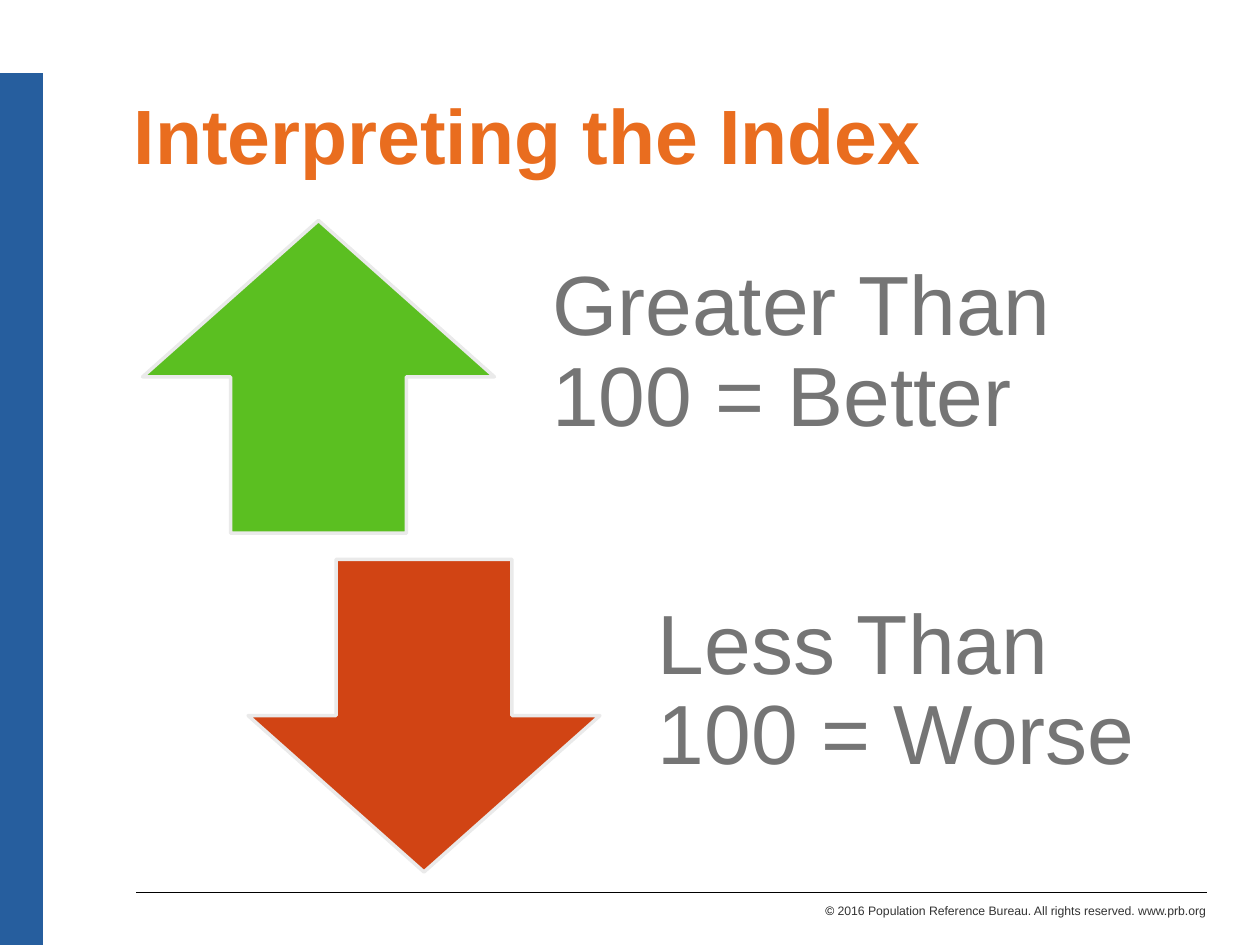
import pptx
import pptx.util
import pptx.dml.color
import pptx.enum.shapes
import pptx.enum.text
import pptx.oxml.ns
import lxml.etree

Pt = pptx.util.Pt
MSO = pptx.enum.shapes.MSO_SHAPE
ANCHOR = pptx.enum.text.MSO_ANCHOR
ALIGN = pptx.enum.text.PP_ALIGN


def rgb(value):
    """Return the colour for a hex string."""
    return pptx.dml.color.RGBColor.from_string(value)


def add_run(p, text, size, color, bold=False):
    """Add one Arial run to a paragraph."""
    r = p.add_run()
    r.text = text
    r.font.name = "Arial"
    r.font.size = Pt(size)
    r.font.bold = bold
    r.font.color.rgb = rgb(color)


def set_frame(tf, left, top, right, bottom, anchor):
    """Set the wrapping, insets and anchor of a text frame."""
    tf.word_wrap = True
    tf.auto_size = pptx.enum.text.MSO_AUTO_SIZE.NONE
    tf.margin_left, tf.margin_top = Pt(left), Pt(top)
    tf.margin_right, tf.margin_bottom = Pt(right), Pt(bottom)
    tf.vertical_anchor = anchor


def add_line(shapes, x1, y1, x2, y2, color, width):
    """Add a straight line without a shadow."""
    line = shapes.add_connector(
        pptx.enum.shapes.MSO_CONNECTOR.STRAIGHT, Pt(x1), Pt(y1), Pt(x2), Pt(y2))
    line.line.color.rgb = rgb(color)
    line.line.width = Pt(width)
    sp_pr = line._element.spPr
    lxml.etree.SubElement(sp_pr, pptx.oxml.ns.qn("a:effectLst"))


def add_title(slide, x, y, w, h):
    """Place and format the slide title."""
    sp = slide.shapes.title
    sp.left, sp.top, sp.width, sp.height = Pt(x), Pt(y), Pt(w), Pt(h)
    set_frame(sp.text_frame, 4.5, 8, 4.5, 0, ANCHOR.TOP)
    p = sp.text_frame.paragraphs[0]
    p.alignment = ALIGN.LEFT
    add_run(p, "Interpreting the Index", 44, "E96D1F", True)


def add_footer(slide, x, y, w):
    """Draw the footer rule with the copyright line below it."""
    add_line(slide.shapes, x, y, x + w, y, "000000", 0.5)
    sp = slide.shapes.add_textbox(Pt(306), Pt(y + 2.6), Pt(x + w + 6.2 - 306), Pt(16))
    set_frame(sp.text_frame, 7.2, 3.6, 7.2, 3.6, ANCHOR.TOP)
    p = sp.text_frame.paragraphs[0]
    p.alignment = ALIGN.RIGHT
    add_run(p, "© ", 7, "000000")
    add_run(p, "2016 Population Reference Bureau. All rights reserved. www.prb.org",
            7, "333333")


def add_reading(slide, x, y, w, h, shape, color, text):
    """Draw an arrow with its meaning to the right."""
    arrow_w, gap = 201, 6.5
    shapes = slide.shapes.add_group_shape().shapes
    sp = shapes.add_shape(shape, Pt(x), Pt(y), Pt(arrow_w), Pt(h))
    sp.shadow.inherit = False
    sp.fill.solid()
    sp.fill.fore_color.rgb = rgb(color)
    sp.line.color.rgb = rgb("EAEAEA")
    sp.line.width = Pt(2)

    text_x = x + arrow_w + gap
    sp = shapes.add_textbox(Pt(text_x), Pt(y), Pt(x + w - text_x), Pt(h))
    set_frame(sp.text_frame, 26.6, 0, 26.6, 26.6, ANCHOR.MIDDLE)
    p = sp.text_frame.paragraphs[0]
    p.line_spacing = 0.9
    add_run(p, text, 48, "757575")


def main():
    """Build the slide and save it."""
    prs = pptx.Presentation()
    prs.slide_width, prs.slide_height = Pt(720), Pt(540)
    slide = prs.slides.add_slide(prs.slide_layouts[5])

    add_line(slide.shapes, 12.2, 42, 12.2, 540, "265E9E", 25)
    add_footer(slide, 78, 510, 612)
    add_title(slide, 72, 42, 576, 54)
    readings = [
        (MSO.UP_ARROW, "5BBF21", "Greater Than 100 = Better"),
        (MSO.DOWN_ARROW, "D14414", "Less Than 100 = Worse"),
    ]
    for i, reading in enumerate(readings):
        add_reading(slide, 81.5 + 60.3 * i, 126 + 193.6 * i, 548, 178.7, *reading)

    prs.save("out.pptx")


if __name__ == "__main__":
    main()
